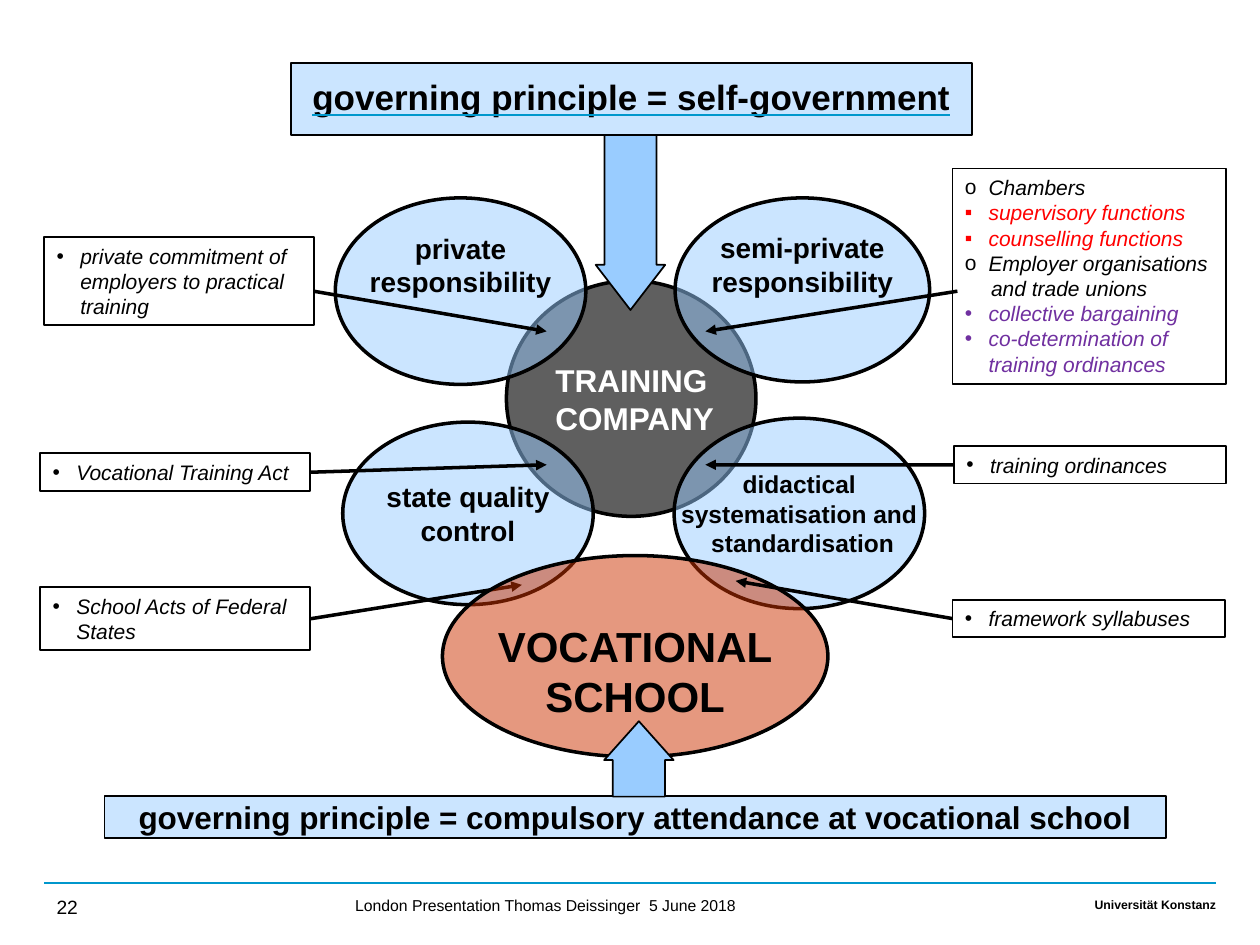
from lxml import etree
from pptx import Presentation
from pptx import util as u
from pptx.dml.color import RGBColor
from pptx.enum import shapes, text
from pptx.oxml.ns import qn

BLACK = RGBColor(0x00, 0x00, 0x00)
WHITE = RGBColor(0xFF, 0xFF, 0xFF)
GREY = RGBColor(0x5F, 0x5F, 0x5F)
BLUE = RGBColor(0x99, 0xCC, 0xFF)
BRICK = RGBColor(0xCC, 0x33, 0x00)
RED = RGBColor(0xFF, 0x00, 0x00)
PURPLE = RGBColor(0x70, 0x30, 0xA0)
ACCENT = RGBColor(0x00, 0x97, 0xCC)

SHAPE = shapes.MSO_SHAPE
ALIGN = text.PP_ALIGN
ANCHOR = text.MSO_ANCHOR
LEFT_SIDE, RIGHT_SIDE = 1, 3
HALF = 50  # opacity in percent

LIST_INDENT = 0.48
NOTE_HEIGHT = 0.76


def style_font(paragraph, size, color=BLACK, bold=False, italic=False):
    font = paragraph.font
    font.name = "Arial"
    font.size = u.Pt(size)
    font.bold = bold
    font.italic = italic
    font.color.rgb = color


def set_indent(paragraph, margin, first_line):
    properties = paragraph._p.get_or_add_pPr()
    properties.set("marL", str(u.Cm(margin)))
    properties.set("indent", str(u.Cm(first_line)))
    return properties


def add_bullet(paragraph, symbol, color):
    properties = set_indent(paragraph, LIST_INDENT, -LIST_INDENT)
    bullet_color = etree.SubElement(properties, qn("a:buClr"))
    etree.SubElement(bullet_color, qn("a:srgbClr"), val=str(color))
    etree.SubElement(properties, qn("a:buFont"), typeface="Arial")
    etree.SubElement(properties, qn("a:buChar"), char=symbol)


def add_box(slide, kind, box, fill=None, opacity=100, line_width=1):
    shape = slide.shapes.add_shape(kind, *map(u.Cm, box))
    shape.shadow.inherit = False
    shape.line.color.rgb = BLACK
    shape.line.width = u.Pt(line_width)
    if fill is None:
        shape.fill.background()
    else:
        shape.fill.solid()
        shape.fill.fore_color.rgb = fill
        if opacity < 100:
            color = shape._element.spPr.find(qn("a:solidFill"))[0]
            etree.SubElement(color, qn("a:alpha"), val=str(opacity * 1000))
    return shape


def write_label(shape, label, size, color=BLACK, anchor=ANCHOR.MIDDLE,
                align=ALIGN.CENTER, bold=True, wrap=True):
    frame = shape.text_frame
    frame.word_wrap = wrap
    frame.vertical_anchor = anchor
    paragraph = frame.paragraphs[0]
    paragraph.text = label.replace("\n", "\v")
    paragraph.alignment = align
    style_font(paragraph, size, color, bold)
    return paragraph


def add_ellipse(slide, box, label, size, fill=BLUE, opacity=HALF, **options):
    shape = add_box(slide, SHAPE.OVAL, box, fill, opacity, line_width=2)
    write_label(shape, label, size, wrap=False, **options)


def add_banner(slide, box, label, size):
    shape = add_box(slide, SHAPE.RECTANGLE, box, BLUE, HALF)
    return write_label(shape, label, size)


def add_note(slide, box, items):
    """Outlined list; each item is (bullet or None, wording, colour)."""
    shape = add_box(slide, SHAPE.RECTANGLE, box)
    frame = shape.text_frame
    frame.word_wrap = True
    frame.vertical_anchor = ANCHOR.TOP
    for index, (symbol, wording, color) in enumerate(items):
        paragraph = frame.add_paragraph() if index else frame.paragraphs[0]
        paragraph.text = wording
        paragraph.alignment = ALIGN.LEFT
        if symbol:
            add_bullet(paragraph, symbol, color)
        else:
            set_indent(paragraph, 0.53, 0)
        style_font(paragraph, 12, color, italic=True)
    return shape


def add_line(slide, start, end, color=BLACK, width=2):
    line = slide.shapes.add_connector(
        shapes.MSO_CONNECTOR.STRAIGHT, *map(u.Cm, start + end))
    line.line.color.rgb = color
    line.line.width = u.Pt(width)
    etree.SubElement(line._element.spPr, qn("a:effectLst"))
    return line


def add_arrow(slide, start, end, note=None, side=None):
    arrow = add_line(slide, start, end)
    etree.SubElement(arrow.line._get_or_add_ln(), qn("a:tailEnd"), type="triangle")
    if note is not None:
        arrow.begin_connect(note, side)


def add_block_arrow(slide, kind, box, head):
    shape = add_box(slide, kind, box, BLUE)
    shape.adjustments[0] = 0.75
    shape.adjustments[1] = head


def add_footer_text(slide, left, width, label, size, **options):
    box = slide.shapes.add_textbox(*map(u.Cm, (left, 17.93, width, 0.61)))
    write_label(box, label, size, **options)
    return box


def add_footer(slide):
    add_line(slide, (0.89, 17.8), (24.51, 17.8), ACCENT, 1)
    owner = add_footer_text(slide, 15.9, 8.61, "Universität Konstanz", 7,
                            anchor=ANCHOR.BOTTOM, align=ALIGN.RIGHT)
    frame = owner.text_frame
    frame.margin_left = frame.margin_top = frame.margin_right = 0
    frame.margin_bottom = u.Cm(0.15)
    plain = dict(anchor=ANCHOR.TOP, align=ALIGN.LEFT, bold=False)
    add_footer_text(slide, 0.89, 2.59, "22", 11, **plain)
    add_footer_text(slide, 6.91, 11.81,
                    "London Presentation Thomas Deissinger  5 June 2018", 9, **plain)


def add_title(slide):
    title = add_banner(slide, (5.87, 1.27, 13.72, 1.45),
                       "governing principle = self-government", 20)
    title.line_spacing = 0.95
    title.font.underline = True
    # Accent-coloured underline, placed ahead of the typeface
    properties = title.font._element
    underline = etree.Element(qn("a:uFill"))
    fill = etree.SubElement(underline, qn("a:solidFill"))
    etree.SubElement(fill, qn("a:srgbClr"), val=str(ACCENT))
    properties.find(qn("a:latin")).addprevious(underline)


def main():
    presentation = Presentation()
    presentation.slide_width = u.Cm(25.4)
    presentation.slide_height = u.Cm(19.05)
    slide = presentation.slides.add_slide(presentation.slide_layouts[6])

    add_footer(slide)

    # Notes and the training company
    add_note(slide, (19.2, 3.4, 5.51, 4.34), [
        ("o", "Chambers", BLACK),
        ("▪", "supervisory functions", RED),
        ("▪", "counselling functions", RED),
        ("o", "Employer organisations", BLACK),
        (None, "and trade unions", BLACK),
        ("•", "collective bargaining", PURPLE),
        ("•", "co-determination of training ordinances", PURPLE),
    ])
    add_ellipse(slide, (10.21, 5.66, 5.03, 4.75), "TRAINING \nCOMPANY", 18,
                GREY, 100, color=WHITE, align=ALIGN.LEFT)
    _, training_act, school_acts, ordinances, syllabuses = [
        add_note(slide, box, [("•", wording, BLACK)]) for box, wording in (
            ((0.89, 4.78, 5.44, 1.78),
             "private commitment of employers to practical training"),
            ((0.81, 9.14, 5.44, NOTE_HEIGHT), "Vocational Training Act"),
            ((0.81, 11.84, 5.44, 1.27), "School Acts of Federal States"),
            ((19.23, 8.99, 5.49, NOTE_HEIGHT), "training ordinances"),
            ((19.2, 12.09, 5.49, NOTE_HEIGHT), "framework syllabuses"),
        )]
    add_block_arrow(slide, SHAPE.DOWN_ARROW, (12.01, 2.72, 1.4, 3.53), 0.65)

    # Areas of responsibility
    add_ellipse(slide, (13.59, 8.43, 5.05, 3.84),
                "didactical\nsystematisation and\n standardisation", 14)
    add_ellipse(slide, (6.91, 8.51, 5.05, 3.68), "state quality\ncontrol", 16)
    add_ellipse(slide, (6.76, 3.99, 5.05, 3.76), "private\nresponsibility", 16,
                anchor=ANCHOR.TOP)
    add_ellipse(slide, (13.61, 3.99, 5.13, 3.71), "semi-private\nresponsibility", 16,
                anchor=ANCHOR.TOP)

    # Arrows from the notes, with the school between them
    add_arrow(slide, (6.32, 5.87), (11.02, 6.68))
    add_arrow(slide, (6.25, 12.47), (10.52, 11.79), school_acts, RIGHT_SIDE)
    add_arrow(slide, (19.23, 9.37), (14.22, 9.37), ordinances, LEFT_SIDE)
    add_arrow(slide, (19.3, 5.87), (14.22, 6.68))
    add_ellipse(slide, (8.92, 11.2, 7.77, 4.06), "VOCATIONAL\nSCHOOL", 24, BRICK,
                anchor=ANCHOR.BOTTOM)
    add_arrow(slide, (19.2, 12.47), (14.83, 11.71), syllabuses, LEFT_SIDE)
    add_arrow(slide, (6.25, 9.45), (11.02, 9.37), training_act, RIGHT_SIDE)

    # Governing principles
    add_banner(slide, (2.11, 16.05, 21.39, 0.84),
               "governing principle = compulsory attendance at vocational school", 18)
    add_block_arrow(slide, SHAPE.UP_ARROW, (12.18, 14.54, 1.4, 1.52), 0.56)
    add_title(slide)

    presentation.save("out.pptx")


if __name__ == "__main__":
    main()
